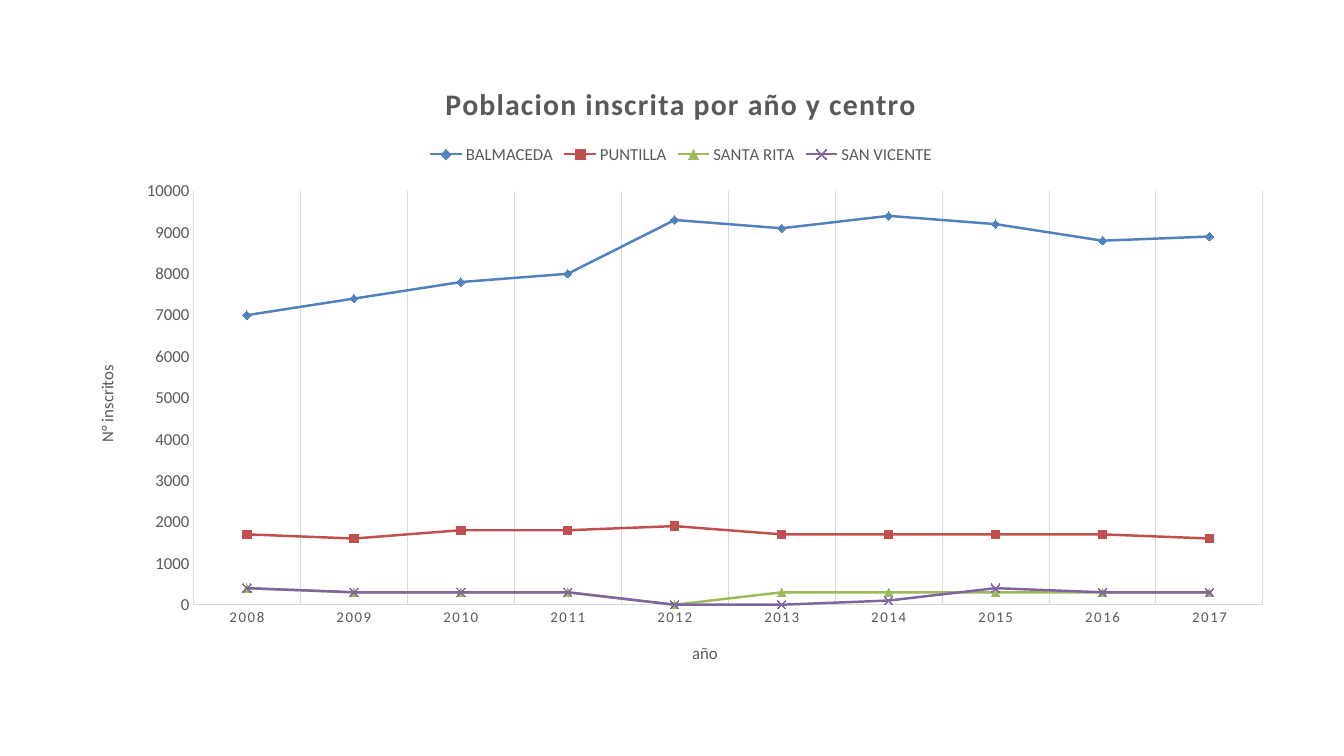
from lxml import etree
from pptx import Presentation
from pptx.chart.data import CategoryChartData
from pptx.dml.color import RGBColor
from pptx.enum.chart import XL_CHART_TYPE as Kind, XL_LEGEND_POSITION as Place
from pptx.enum.chart import XL_MARKER_STYLE as Mark, XL_TICK_MARK as Tick
from pptx.oxml.ns import qn
from pptx.util import Pt

TITLE = "Poblacion inscrita por año y centro"
YEARS = [str(year) for year in range(2008, 2018)]
CENTERS = [
    ("BALMACEDA", "4F81BD", Mark.DIAMOND,
     [7000, 7400, 7800, 8000, 9300, 9100, 9400, 9200, 8800, 8900]),
    ("PUNTILLA", "C0504D", Mark.SQUARE,
     [1700, 1600, 1800, 1800, 1900, 1700, 1700, 1700, 1700, 1600]),
    ("SANTA RITA", "9BBB59", Mark.TRIANGLE,
     [400, 300, 300, 300, 0, 300, 300, 300, 300, 300]),
    ("SAN VICENTE", "8064A2", Mark.X,
     [400, 300, 300, 300, 0, 0, 100, 400, 300, 300]),
]
GRAY, PALE = "595959", "D9D9D9"
FRAME = (53.3, 43.2, 866.2, 446.4)
PLOT = {"x": 0.098, "y": 0.209, "w": 0.882, "h": 0.662}


def color(text):
    return RGBColor.from_string(text)


def style(font, size, bold=False):
    font.name, font.size, font.bold = "Calibri", Pt(size), bold
    font.color.rgb = color(GRAY)


def write(frame, text, size=12, bold=False, gap=0):
    run = frame.paragraphs[0].add_run()
    run.text = text
    style(run.font, size, bold)
    if gap:
        run.font._element.set("spc", str(gap))


def stroke(line, tint, width=0.75):
    line.color.rgb = color(tint)
    line.width = Pt(width)


def set_axis(axis, text, size):
    axis.major_tick_mark = axis.minor_tick_mark = Tick.NONE
    write(axis.axis_title.text_frame, text)
    style(axis.tick_labels.font, size)
    stroke(axis.format.line, PALE)


def place_plot(area):
    """Fix the inner plot area as fractions of the chart."""
    layout = area.find(qn("c:layout"))
    if layout is None:
        layout = etree.Element(qn("c:layout"))
        area.insert(0, layout)
    manual = etree.SubElement(layout, qn("c:manualLayout"))
    items = {"layoutTarget": "inner", "xMode": "edge", "yMode": "edge", **PLOT}
    for tag, val in items.items():
        etree.SubElement(manual, qn("c:" + tag)).set("val", str(val))


def main():
    deck = Presentation()
    deck.slide_width, deck.slide_height = Pt(960), Pt(540)
    slide = deck.slides.add_slide(deck.slide_layouts[6])

    data = CategoryChartData()
    data.categories = YEARS
    for name, _, _, vals in CENTERS:
        data.add_series(name, vals)
    chart = slide.shapes.add_chart(
        Kind.LINE_MARKERS, *map(Pt, FRAME), data).chart
    chart.font.name, chart.font.size = "Calibri", Pt(10)

    chart.has_title = True
    write(chart.chart_title.text_frame, TITLE, 21.3, True, 100)
    chart.chart_title.include_in_layout = False
    chart.has_legend = True
    chart.legend.position = Place.TOP
    chart.legend.include_in_layout = False
    style(chart.legend.font, 12)

    years, counts = chart.category_axis, chart.value_axis
    set_axis(years, "año", 10.6)
    set_axis(counts, "N° inscritos", 12)
    years.has_major_gridlines = True
    stroke(years.major_gridlines.format.line, PALE)
    counts.has_major_gridlines = False
    counts.minimum_scale, counts.maximum_scale = 0, 10000
    counts.major_unit = 1000
    root = chart.element
    root.xpath(".//c:catAx/c:txPr//a:defRPr")[0].set("spc", "120")
    place_plot(root.xpath(".//c:plotArea")[0])

    plot = chart.plots[0]
    plot.vary_by_categories = False
    for series, (_, tint, shape, _) in zip(plot.series, CENTERS):
        series.smooth = False
        stroke(series.format.line, tint, 1.75)
        mark = series.marker
        mark.style, mark.size = shape, 6
        stroke(mark.format.line, tint)
        if shape == Mark.X:
            mark.format.fill.background()
        else:
            mark.format.fill.solid()
            mark.format.fill.fore_color.rgb = color(tint)

    deck.save("out.pptx")


if __name__ == "__main__":
    main()
